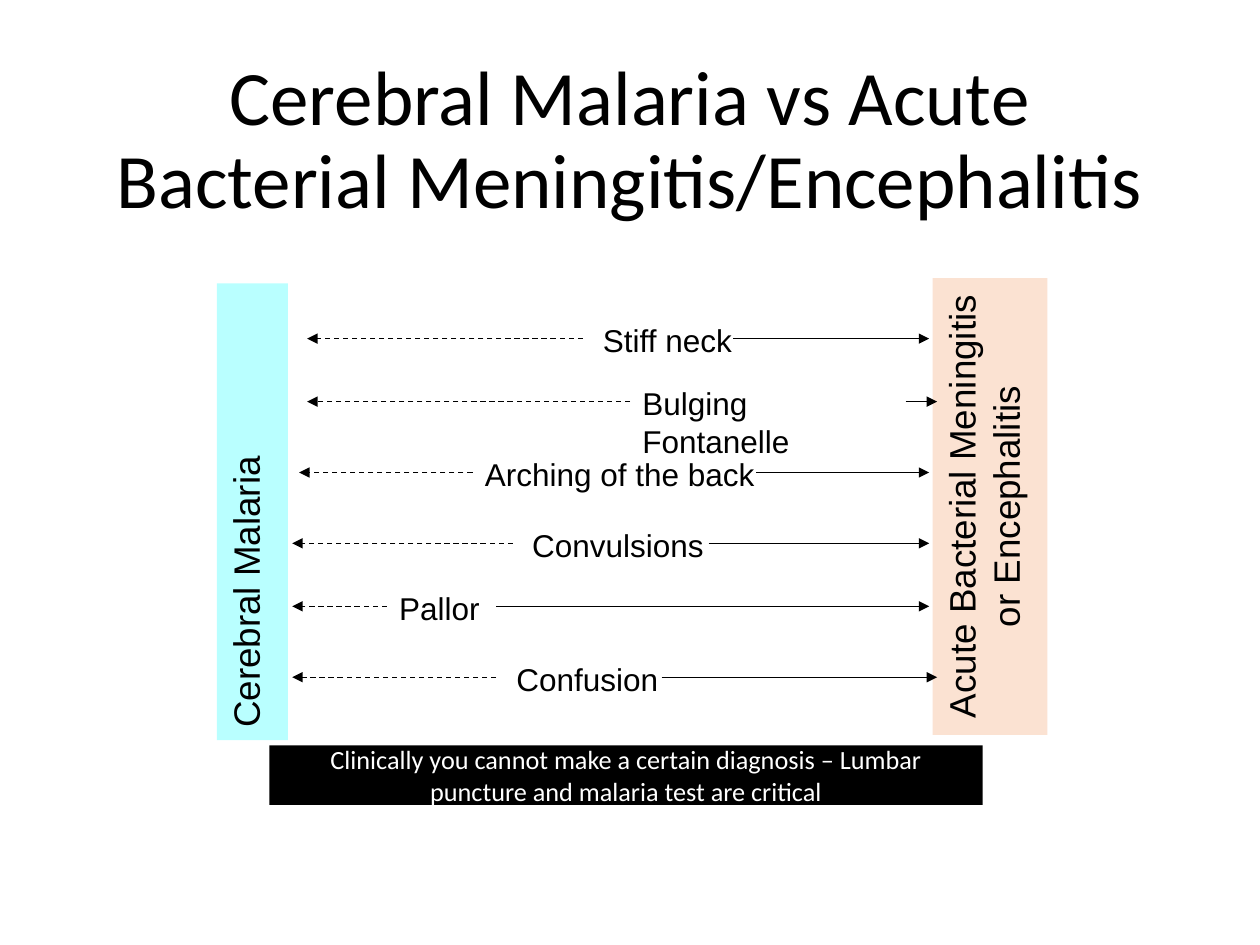
from lxml import etree
from pptx import Presentation
from pptx.dml.color import RGBColor
from pptx.enum.dml import MSO_LINE_DASH_STYLE as Dash
from pptx.enum.shapes import MSO_CONNECTOR as Connector, MSO_SHAPE as Shape
from pptx.enum.text import MSO_ANCHOR as Anchor, PP_ALIGN as Align
from pptx.oxml.ns import qn
from pptx.util import Pt

COLOURS = {
    "text": "000000",
    "inverse": "FFFFFF",
    "malaria": "B9FFFF",
    "meningitis": "F8CBAD",
    "conclusion": "000000",
}

# Label, its left and width, row top, dashed arrow (start, end), solid arrow (start, end)
SIGNS = [
    ("Stiff neck", 337.5, 121.5, 180, (333, 175.5), (419, 531)),
    ("Bulging Fontanelle", 360, 162, 216, (360, 175.5), (517.5, 535.5)),
    ("Arching of the back", 270, 175.5, 256.5, (270, 171), (432, 531)),
    ("Convulsions", 297, 121.5, 297, (293, 167), (405, 531)),
    ("Pallor", 221, 121.5, 333, (221, 167), (283.5, 531)),
    ("Confusion", 288, 121.5, 373.5, (283.5, 167), (378, 535.5)),
]
ARROW_DROP = 13.5  # from the top of a label to its arrows


def colour(name):
    return RGBColor.from_string(COLOURS[name])


def write(frame, text, size=18, font="Arial", ink="text", align=Align.LEFT,
          anchor=Anchor.TOP, spacing=None):
    frame.word_wrap = True
    frame.vertical_anchor = anchor
    paragraph = frame.paragraphs[0]
    paragraph.alignment = align
    paragraph.line_spacing = spacing
    run = paragraph.add_run()
    run.text = text
    run.font.name = font
    run.font.size = Pt(size)
    run.font.color.rgb = colour(ink)


class SlideBuilder:
    def __init__(self, slide):
        self.slide = slide

    def text(self, box, text, **style):
        shape = self.slide.shapes.add_textbox(*map(Pt, box))
        write(shape.text_frame, text, **style)

    def block(self, box, fill, text, opacity=None, upright=False, **style):
        shape = self.slide.shapes.add_shape(Shape.RECTANGLE, *map(Pt, box))
        shape.shadow.inherit = False
        shape.fill.solid()
        shape.fill.fore_color.rgb = colour(fill)
        shape.line.fill.background()
        if opacity:
            solid = shape._element.spPr.find(qn("a:solidFill"))
            etree.SubElement(solid[0], qn("a:alpha"), val=str(opacity * 1000))
        if upright:  # text reads from bottom to top
            shape.text_frame._txBody.bodyPr.set("vert", "vert270")
        write(shape.text_frame, text, **style)

    def arrow(self, start, end, y, dashed=False):
        connector = self.slide.shapes.add_connector(
            Connector.STRAIGHT, Pt(start), Pt(y), Pt(end), Pt(y))
        connector.line.color.rgb = colour("text")
        connector.line.width = Pt(0.75)
        if dashed:
            connector.line.dash_style = Dash.DASH
        properties = connector._element.spPr
        etree.SubElement(properties.find(qn("a:ln")), qn("a:tailEnd"), type="triangle")
        etree.SubElement(properties, qn("a:effectLst"))


def main():
    presentation = Presentation()
    presentation.slide_width, presentation.slide_height = Pt(720), Pt(540)
    builder = SlideBuilder(presentation.slides.add_slide(presentation.slide_layouts[6]))

    # Title
    builder.text((49.5, 29, 621, 104.5),
                 "Cerebral Malaria vs Acute Bacterial Meningitis/Encephalitis",
                 size=44, font="Calibri", align=Align.CENTER,
                 anchor=Anchor.MIDDLE, spacing=0.9)

    # The two diagnoses
    builder.block((124, 162, 40.5, 261), "malaria", "Cerebral Malaria",
                  upright=True, size=21)
    builder.block((533, 159, 65.5, 261), "meningitis",
                  "Acute Bacterial Meningitis or Encephalitis",
                  opacity=54, upright=True, size=21, align=Align.CENTER)

    # Signs with an arrow to each diagnosis
    for label, left, width, top, dashed, solid in SIGNS:
        builder.text((left, top, width, 29), label)
        builder.arrow(*dashed, top + ARROW_DROP, dashed=True)
        builder.arrow(*solid, top + ARROW_DROP)

    # Conclusion
    builder.block((154, 426, 407.5, 34), "conclusion",
                  "Clinically you cannot make a certain diagnosis – "
                  "Lumbar puncture and malaria test are critical",
                  size=15, font="Calibri", ink="inverse",
                  align=Align.CENTER, anchor=Anchor.MIDDLE)

    presentation.save("out.pptx")


if __name__ == "__main__":
    main()
